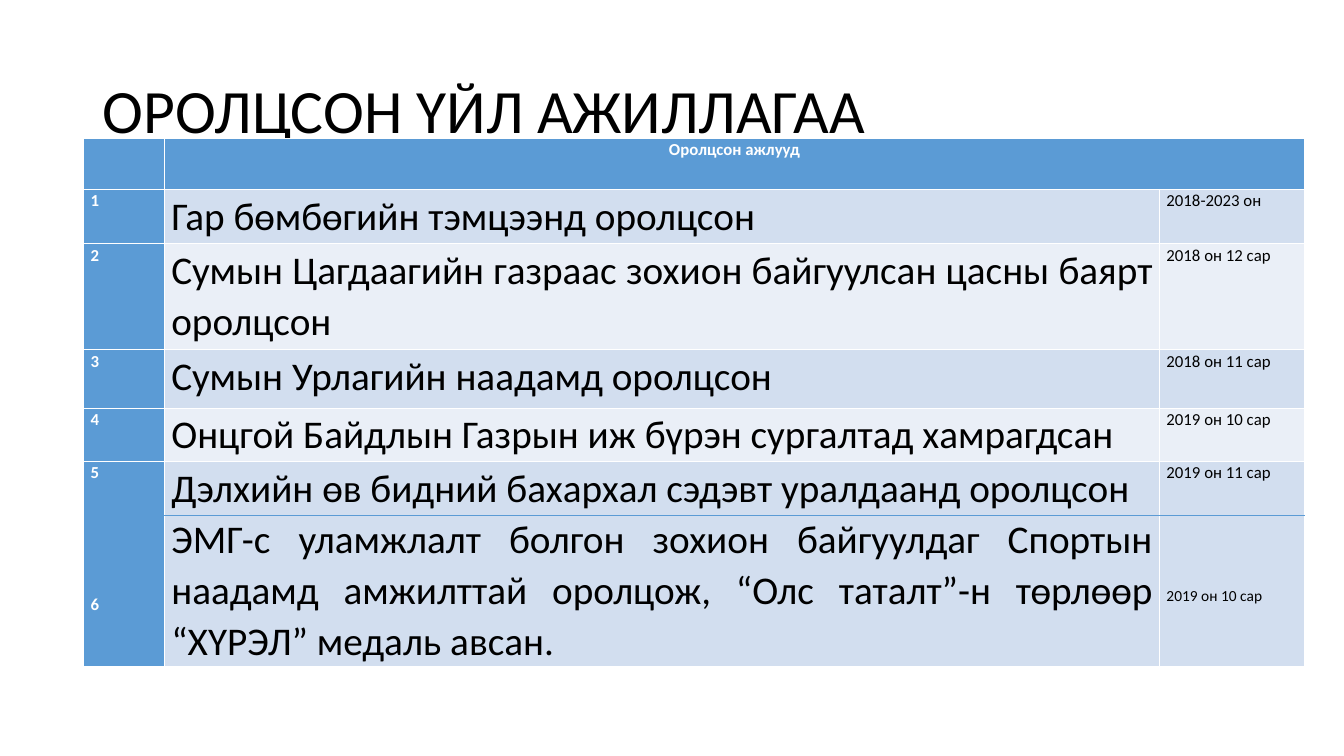
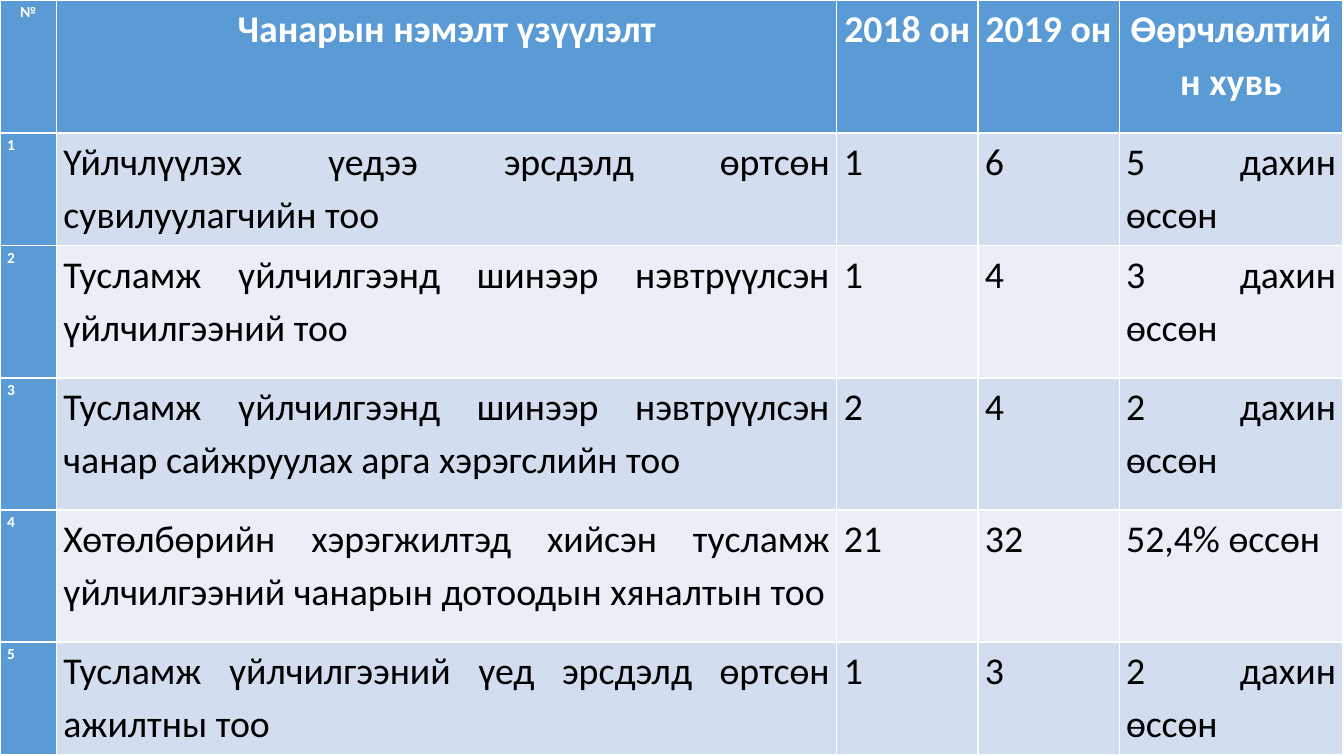
import pptx
import pptx.dml.color
import pptx.enum.shapes
import pptx.enum.text
import pptx.oxml.ns
import pptx.util
import lxml.etree
from pptx.util import Inches

RGBColor = pptx.dml.color.RGBColor
BLUE = RGBColor(0x5B, 0x9B, 0xD5)
BAND_DARK = RGBColor(0xD2, 0xDE, 0xEF)
BAND_LIGHT = RGBColor(0xEA, 0xEF, 0xF7)
WHITE = RGBColor(0xFF, 0xFF, 0xFF)
BLACK = RGBColor(0, 0, 0)

ALIGN = pptx.enum.text.PP_ALIGN
TITLE_LAYOUT, BLANK_LAYOUT = 5, 6

EVENTS = [
    ("", "Оролцсон ажлууд", ""),
    ("1", "Гар бөмбөгийн тэмцээнд оролцсон", "2018-2023 он"),
    ("2", "Сумын Цагдаагийн газраас зохион байгуулсан цасны баярт оролцсон",
     "2018 он 12 сар"),
    ("3", "Сумын Урлагийн наадамд оролцсон", "2018 он 11 сар"),
    ("4", "Онцгой Байдлын Газрын иж бүрэн сургалтад хамрагдсан", "2019 он 10 сар"),
    ("5", "Дэлхийн өв бидний бахархал сэдэвт уралдаанд оролцсон", "2019 он 11 сар"),
]
LAST_EVENT = [
    ("6", 12, 78),
    ("ЭМГ-с уламжлалт болгон зохион байгуулдаг Спортын наадамд амжилттай оролцож, "
     "“Олс таталт”-н төрлөөр “ХҮРЭЛ” медаль авсан.", 28, 0),
    ("2019 он 10 сар", 11, 73),
]
INDICATORS = [
    ("№", "Чанарын нэмэлт үзүүлэлт", "2018 он", "2019 он", "Өөрчлөлтийн хувь"),
    ("1", "Үйлчлүүлэх үедээ эрсдэлд өртсөн сувилуулагчийн тоо", "1", "6", "5 дахин өссөн"),
    ("2", "Тусламж үйлчилгээнд шинээр нэвтрүүлсэн үйлчилгээний тоо", "1", "4",
     "3 дахин өссөн"),
    ("3", "Тусламж үйлчилгээнд шинээр нэвтрүүлсэн чанар сайжруулах арга хэрэгслийн тоо",
     "2", "4", "2 дахин өссөн"),
    ("4", "Хөтөлбөрийн хэрэгжилтэд хийсэн тусламж үйлчилгээний чанарын дотоодын "
     "хяналтын тоо", "21", "32", "52,4% өссөн"),
    ("5", "Тусламж үйлчилгээний үед эрсдэлд өртсөн ажилтны тоо", "1", "3",
     "2 дахин өссөн"),
]


def apply(target, values):
    for name, value in values.items():
        setattr(target, name, value)


class Deck:
    font = "Calibri"
    cell_format = {
        "margin_left": Inches(0.07), "margin_right": Inches(0.07),
        "margin_top": 0, "margin_bottom": 0,
    }

    def __init__(self):
        self.presentation = pptx.Presentation()
        apply(self.presentation,
              {"slide_width": Inches(13.33), "slide_height": Inches(7.5)})
        self.slide = None

    def add_slide(self, layout):
        layouts = self.presentation.slide_layouts
        self.slide = self.presentation.slides.add_slide(layouts[layout])

    def add_text(self, paragraph, text, size, color=BLACK, bold=False,
                 alignment=ALIGN.JUSTIFY, spacing=1.0, gap=0):
        apply(paragraph, {"alignment": alignment, "line_spacing": spacing,
                          "space_before": pptx.util.Pt(gap)})
        run = paragraph.add_run()
        run.text = text
        apply(run.font, {"name": self.font, "size": pptx.util.Pt(size), "bold": bold})
        run.font.color.rgb = color

    def title(self, text, left, top, width, height):
        shape = self.slide.shapes.title
        apply(shape, {"left": Inches(left), "top": Inches(top),
                      "width": Inches(width), "height": Inches(height)})
        apply(shape.text_frame, {
            "vertical_anchor": pptx.enum.text.MSO_ANCHOR.MIDDLE,
            "auto_size": pptx.enum.text.MSO_AUTO_SIZE.NONE, "word_wrap": True})
        self.add_text(shape.text_frame.paragraphs[0], text, 44,
                      alignment=ALIGN.LEFT, spacing=0.9)

    def table(self, rows, left, top, widths, heights, header_sizes, sizes, spacing):
        table = self.slide.shapes.add_table(
            len(rows), len(widths), Inches(left), Inches(top),
            Inches(sum(widths)), Inches(sum(heights))).table
        for column, width in zip(table.columns, widths):
            column.width = Inches(width)
        for row, height in zip(table.rows, heights):
            row.height = Inches(height)
        for row_index, texts in enumerate(rows):
            is_header = row_index == 0
            band = BAND_DARK if row_index % 2 else BAND_LIGHT
            for column_index, text in enumerate(texts):
                cell = table.cell(row_index, column_index)
                accented = is_header or column_index == 0
                apply(cell, self.cell_format)
                cell.fill.solid()
                cell.fill.fore_color.rgb = BLUE if accented else band
                if text:
                    self.add_text(cell.text_frame.paragraphs[0], text,
                                  (header_sizes if is_header else sizes)[column_index],
                                  WHITE if accented else BLACK, accented,
                                  ALIGN.CENTER if is_header else ALIGN.JUSTIFY, spacing)
        return table

    def line(self, left, top, right):
        connector = self.slide.shapes.add_connector(
            pptx.enum.shapes.MSO_CONNECTOR.STRAIGHT,
            Inches(left), Inches(top), Inches(right), Inches(top))
        connector.line.color.rgb = BLUE
        connector.line.width = pptx.util.Pt(0.5)
        lxml.etree.SubElement(connector._element.spPr,
                              pptx.oxml.ns.qn("a:effectLst"))


def events_slide(deck):
    deck.add_slide(TITLE_LAYOUT)
    deck.title("ОРОЛЦСОН ҮЙЛ АЖИЛЛАГАА", 0.92, 0.4, 11.5, 1.45)
    spacing = 1.07
    table = deck.table(EVENTS, 0.83, 1.37, [0.8, 9.87, 1.44],
                       [0.51, 0.54, 1.05, 0.58, 0.53, 2.03],
                       [12, 12, 12], [12, 28, 12], spacing)
    table.cell(0, 1).merge(table.cell(0, 2))
    for column_index, (text, size, gap) in enumerate(LAST_EVENT):
        is_number = column_index == 0
        paragraph = table.cell(len(EVENTS) - 1, column_index).text_frame.add_paragraph()
        deck.add_text(paragraph, text, size, WHITE if is_number else BLACK, is_number,
                      spacing=spacing, gap=gap)
    deck.line(0.91, 5.11, 12.94)


def indicators_slide(deck):
    deck.add_slide(BLANK_LAYOUT)
    sizes = [11, 27, 27, 27, 27]
    deck.table(INDICATORS, 0, 0, [0.56, 7.74, 1.4, 1.4, 2.22],
               [1.32, 1.12, 1.31, 1.31, 1.31, 1.12], sizes, sizes, 1.15)


def main():
    deck = Deck()
    events_slide(deck)
    indicators_slide(deck)
    deck.presentation.save("out.pptx")


if __name__ == "__main__":
    main()
